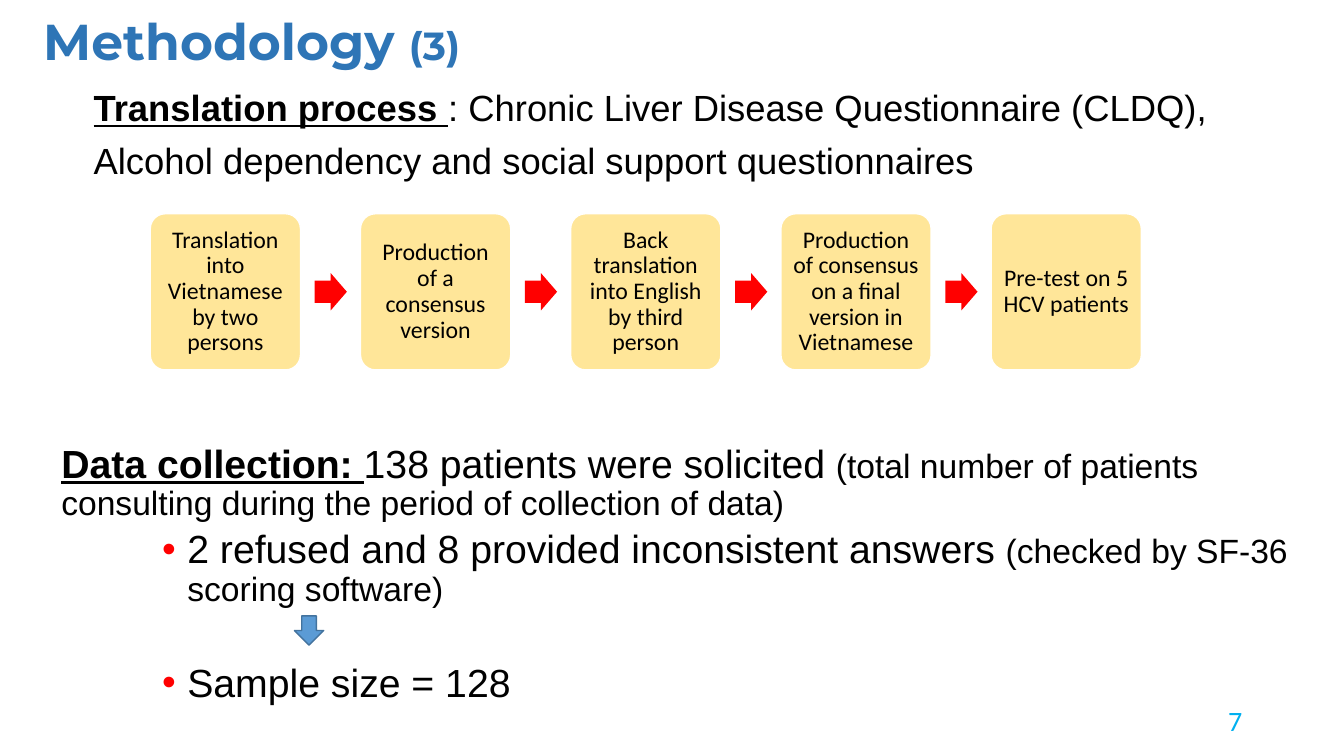
from lxml.etree import SubElement
from pptx import Presentation
from pptx.dml.color import RGBColor
from pptx.enum.shapes import MSO_SHAPE as Shape
from pptx.enum.text import MSO_ANCHOR as Anchor, PP_ALIGN as Align
from pptx.oxml.ns import qn
from pptx.util import Inches, Pt

BLACK = RGBColor(0x00, 0x00, 0x00)
WHITE = RGBColor(0xFF, 0xFF, 0xFF)
TITLE = RGBColor(0x2E, 0x75, 0xB6)
CYAN = RGBColor(0x00, 0xB0, 0xF0)
RED = RGBColor(0xFF, 0x00, 0x00)
CREAM = RGBColor(0xFF, 0xE6, 0x99)
BLUE = RGBColor(0x5B, 0x9B, 0xD5)
NAVY = RGBColor(0x43, 0x73, 0x9E)

STEPS = [
    "Translation into Vietnamese by two persons",
    "Production of a consensus version",
    "Back translation into English by third person",
    "Production of consensus on a final version in Vietnamese",
    "Pre-test on 5 HCV patients",
]
LEFT, PITCH = 1.49, 2.085


def add_box(slide, x, y, w, h, anchor=Anchor.TOP):
    box = slide.shapes.add_textbox(Inches(x), Inches(y), Inches(w), Inches(h))
    frame = box.text_frame
    frame.word_wrap = True
    frame.vertical_anchor = anchor
    return frame


def add_run(para, text, size, font="Arial", color=BLACK, bold=False, line=False):
    run = para.add_run()
    run.text = text
    run.font.size = Pt(size)
    run.font.name = font
    run.font.color.rgb = color
    run.font.bold = bold
    run.font.underline = line


def set_space(para, line, before=0):
    para.line_spacing = line
    para.space_before = Pt(before)


def set_indent(para, left, first=0):
    props = para._p.get_or_add_pPr()
    props.set("marL", str(Inches(left)))
    props.set("indent", str(Inches(first)))
    return props


def add_bullet(frame, before):
    para = frame.add_paragraph()
    set_space(para, 0.9, before)
    props = set_indent(para, 1.25, -0.25)
    color = SubElement(props, qn("a:buClr"))
    SubElement(color, qn("a:srgbClr"), val=str(RED))
    SubElement(props, qn("a:buFont"), typeface="Arial")
    SubElement(props, qn("a:buChar"), char="•")
    return para


def add_form(slide, kind, x, y, w, h, fill, line=None):
    form = slide.shapes.add_shape(kind, Inches(x), Inches(y), Inches(w), Inches(h))
    form.shadow.inherit = False
    form.fill.solid()
    form.fill.fore_color.rgb = fill
    if line is None:
        form.line.fill.background()
    else:
        form.line.color.rgb = line
        form.line.width = Pt(1)
    return form


def add_step(slide, x, text):
    card = add_form(slide, Shape.ROUNDED_RECTANGLE, x, 2.12, 1.49, 1.55, CREAM, WHITE)
    card.adjustments[0] = 0.1
    frame = card.text_frame
    frame.word_wrap = True
    frame.vertical_anchor = Anchor.MIDDLE
    frame.margin_left = frame.margin_right = Inches(0.07)
    frame.margin_top = frame.margin_bottom = Inches(0.07)
    para = frame.paragraphs[0]
    para.alignment = Align.CENTER
    set_space(para, 0.9)
    add_run(para, text, 17, "Calibri")


def add_flow(slide):
    for i, text in enumerate(STEPS):
        x = LEFT + i * PITCH
        add_step(slide, x, text)
        if i < len(STEPS) - 1:
            arrow = add_form(slide, Shape.RIGHT_ARROW, x + 1.63, 2.71, 0.32, 0.37, RED)
            arrow.adjustments[0] = 0.6


def add_title(slide):
    para = add_box(slide, 0.33, 0.16, 4.91, 0.56, Anchor.MIDDLE).paragraphs[0]
    set_space(para, 0.9)
    add_run(para, "Methodology ", 36, "Montserrat", TITLE, True)
    add_run(para, "(3)", 28, "Montserrat", TITLE, True)


def add_intro(slide):
    para = add_box(slide, 0.33, 0.71, 12.83, 1.21).paragraphs[0]
    set_indent(para, 0.5)
    set_space(para, 1.2, 5)
    add_run(para, "Translation process ", 26, bold=True, line=True)
    add_run(para, ": Chronic Liver Disease Questionnaire (CLDQ), Alcohol "
            "dependency and social support questionnaires", 26)


def add_data(slide):
    frame = add_box(slide, 0.51, 4.36, 12.46, 3.1)
    para = frame.paragraphs[0]
    set_space(para, 0.9, 10)
    add_run(para, "Data collection: ", 28, bold=True, line=True)
    add_run(para, "138 patients were solicited ", 28)
    add_run(para, "(total number of patients consulting during the period "
            "of collection of data)", 24)
    para = add_bullet(frame, 5)
    add_run(para, "2 refused and 8 provided inconsistent answers ", 28)
    add_run(para, "(checked by SF-36 scoring software)", 24)
    add_run(add_bullet(frame, 39), "Sample size = 128", 28)


def add_number(slide):
    para = add_box(slide, 9.42, 6.95, 3, 0.4, Anchor.MIDDLE).paragraphs[0]
    para.alignment = Align.RIGHT
    add_run(para, "7", 20, "Calibri", CYAN)


def main():
    deck = Presentation()
    deck.slide_width, deck.slide_height = Inches(13.33), Inches(7.5)
    slide = deck.slides.add_slide(deck.slide_layouts[6])
    add_title(slide)
    add_data(slide)
    add_number(slide)
    add_intro(slide)
    add_flow(slide)
    add_form(slide, Shape.DOWN_ARROW, 2.92, 6.11, 0.29, 0.29, BLUE, NAVY)
    deck.save("out.pptx")


if __name__ == "__main__":
    main()
